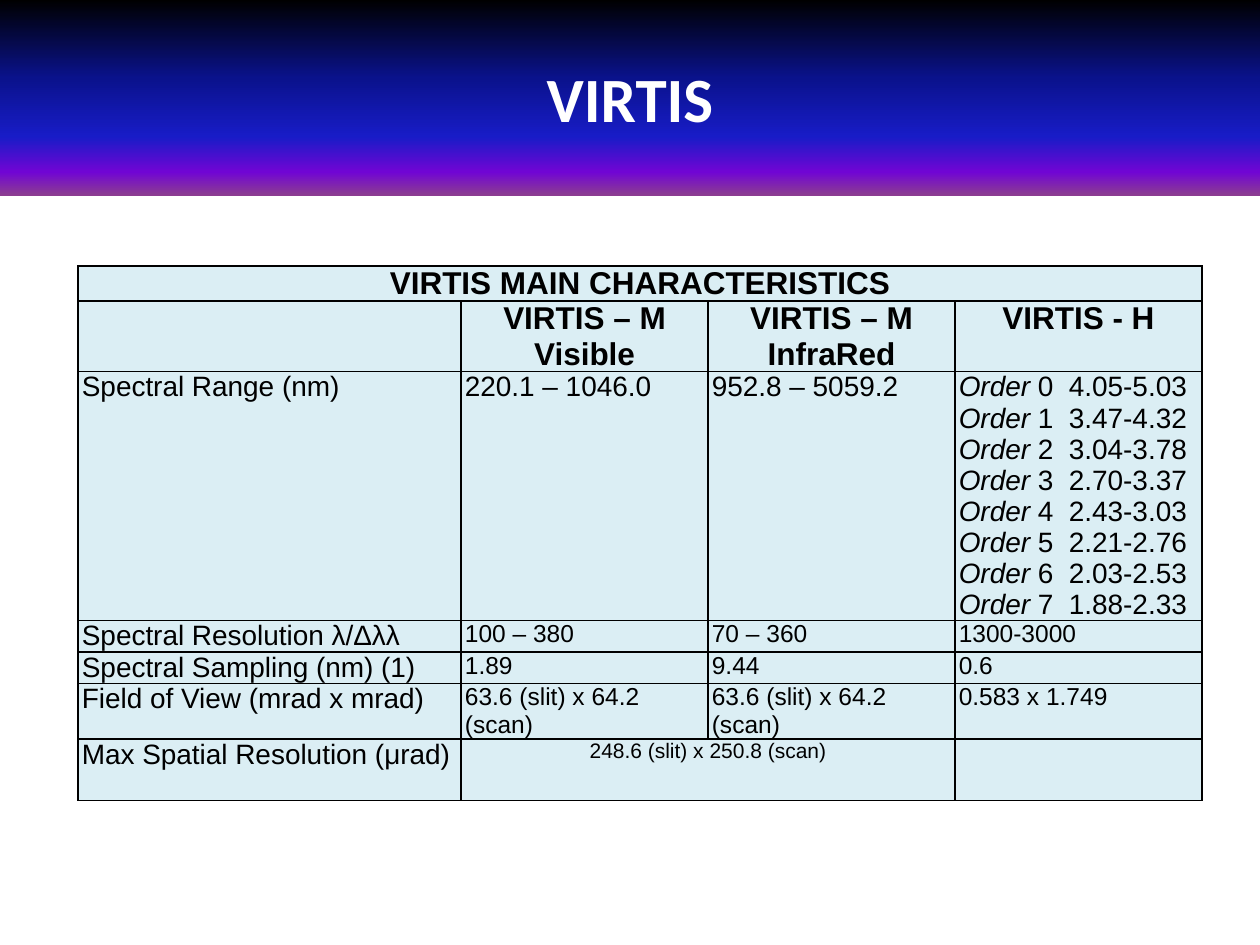
import pptx
import pptx.util
import pptx.dml.color
import pptx.enum.shapes
import pptx.enum.text
import pptx.oxml
import pptx.oxml.ns

Inches = pptx.util.Inches
Pt = pptx.util.Pt
RGBColor = pptx.dml.color.RGBColor
ALIGN = pptx.enum.text.PP_ALIGN
ANCHOR = pptx.enum.text.MSO_ANCHOR

BLACK = RGBColor(0x00, 0x00, 0x00)
WHITE = RGBColor(0xFF, 0xFF, 0xFF)
PALE = RGBColor(0xDB, 0xEE, 0xF4)
FADE = [
    (0, BLACK),
    (40, RGBColor(0x0A, 0x12, 0x8C)),
    (70, RGBColor(0x18, 0x1C, 0xC7)),
    (88, RGBColor(0x70, 0x05, 0xD4)),
    (100, RGBColor(0x8C, 0x3D, 0x91)),
]

COLS = [3.04, 1.96, 1.96, 1.96]
ROWS = [0.28, 0.56, 1.97, 0.25, 0.25, 0.44, 0.49]
HEADS = ["", "VIRTIS – M Visible", "VIRTIS – M InfraRed", "VIRTIS - H"]
RANGES = ["4.05-5.03", "3.47-4.32", "3.04-3.78", "2.70-3.37",
          "2.43-3.03", "2.21-2.76", "2.03-2.53", "1.88-2.33"]
VIEW = "63.6 (slit) x 64.2 (scan)"
# Label, values, size of the values
DATA = [
    ("Spectral Range (nm)", ["220.1 – 1046.0", "952.8 – 5059.2"], 16),
    ("Spectral Resolution λ/Δλλ", ["100 – 380", "70 – 360", "1300-3000"], 14),
    ("Spectral Sampling (nm) (1)", ["1.89", "9.44", "0.6"], 14),
    ("Field of View (mrad x mrad)", [VIEW, VIEW, "0.583 x 1.749"], 14),
    ("Max Spatial Resolution (μrad)", [], 16),
]


def add_run(para, text, size, bold=False, slant=False, face="Arial", color=BLACK):
    run = para.add_run()
    run.text = text
    font = run.font
    font.name, font.size = face, Pt(size)
    font.bold, font.italic = bold, slant
    font.color.rgb = color


def fade(shape):
    shape.fill.gradient()
    shape.fill.gradient_angle = 270
    stops = shape._element.spPr.find(".//" + pptx.oxml.ns.qn("a:gsLst"))
    for old in list(stops):
        stops.remove(old)
    for pos, color in FADE:
        stops.append(pptx.oxml.parse_xml(
            f'<a:gs {pptx.oxml.ns.nsdecls("a")} pos="{pos * 1000}">'
            f'<a:srgbClr val="{color}"/></a:gs>'))


def add_banner(slide, text):
    box = slide.shapes.add_shape(pptx.enum.shapes.MSO_SHAPE.RECTANGLE,
                                 0, 0, Inches(10), Inches(1.55))
    box.shadow.inherit = False
    box.line.fill.background()
    fade(box)
    frame = box.text_frame
    frame.word_wrap = True
    frame.vertical_anchor = ANCHOR.MIDDLE
    para = frame.paragraphs[0]
    para.alignment = ALIGN.CENTER
    add_run(para, text, 36, bold=True, face="Calibri", color=WHITE)


def style(cell):
    cell.margin_left = cell.margin_right = Inches(0.03)
    cell.margin_top = cell.margin_bottom = 0
    props = cell._tc.get_or_add_tcPr()
    for side in "LRTB":
        props.append(pptx.oxml.parse_xml(
            f'<a:ln{side} {pptx.oxml.ns.nsdecls("a")} w="{Pt(1)}"><a:solidFill>'
            f'<a:srgbClr val="{BLACK}"/></a:solidFill></a:ln{side}>'))
    cell.fill.solid()
    cell.fill.fore_color.rgb = PALE


def write(cell, text, size, bold=False, align=ALIGN.LEFT):
    para = cell.text_frame.paragraphs[0]
    para.alignment = align
    if text:
        add_run(para, text, size, bold)


def write_orders(cell):
    frame = cell.text_frame
    for num, span in enumerate(RANGES):
        para = frame.add_paragraph() if num else frame.paragraphs[0]
        add_run(para, "Order", 16, slant=True)
        add_run(para, f" {num}  {span}", 16)


def add_grid(slide):
    table = slide.shapes.add_table(
        len(ROWS), len(COLS), Inches(0.62), Inches(2.11),
        Inches(sum(COLS)), Inches(sum(ROWS))).table
    table.first_row = table.horz_banding = False
    for col, width in zip(table.columns, COLS):
        col.width = Inches(width)
    for row, height in zip(table.rows, ROWS):
        row.height = Inches(height)
    for cell in table.iter_cells():
        style(cell)

    # Headings
    table.cell(0, 0).merge(table.cell(0, 3))
    write(table.cell(0, 0), "VIRTIS MAIN CHARACTERISTICS", 18, True, ALIGN.CENTER)
    for c, head in enumerate(HEADS):
        write(table.cell(1, c), head, 18, True, ALIGN.CENTER)

    # Body
    for r, (label, values, size) in enumerate(DATA, 2):
        write(table.cell(r, 0), label, 16)
        for c, value in enumerate(values, 1):
            write(table.cell(r, c), value, size)
    write_orders(table.cell(2, 3))
    table.cell(6, 1).merge(table.cell(6, 2))
    write(table.cell(6, 1), "248.6 (slit) x 250.8 (scan)", 12, align=ALIGN.CENTER)


def main():
    deck = pptx.Presentation()
    deck.slide_width, deck.slide_height = Inches(10), Inches(7.5)
    slide = deck.slides.add_slide(deck.slide_layouts[6])
    add_banner(slide, "VIRTIS")
    add_grid(slide)
    deck.save("out.pptx")


if __name__ == "__main__":
    main()
